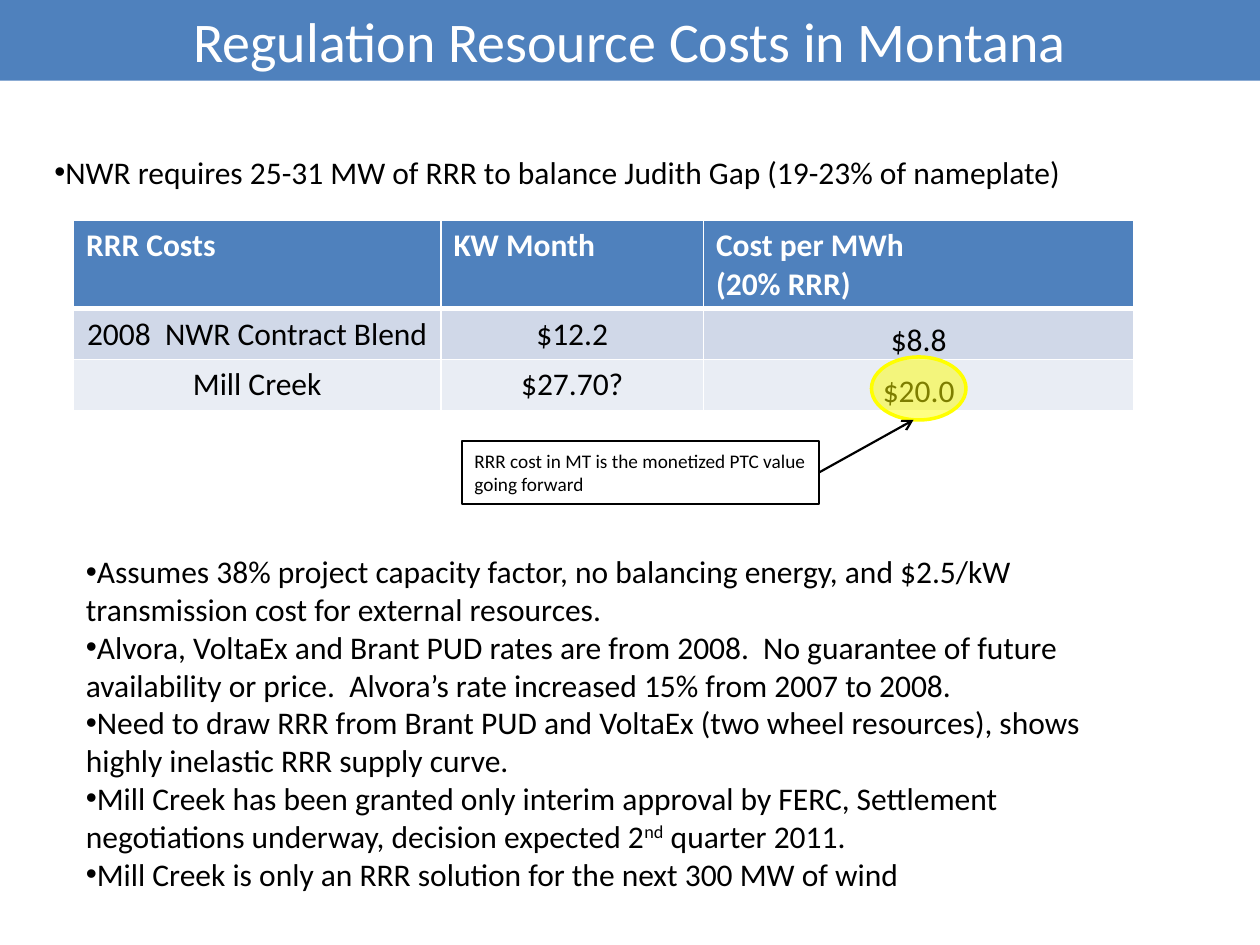
from lxml.etree import SubElement
from pptx import Presentation
from pptx.dml.color import RGBColor
from pptx.enum.shapes import MSO_CONNECTOR, MSO_SHAPE
from pptx.enum.text import MSO_ANCHOR, PP_ALIGN
from pptx.oxml.ns import qn
from pptx.util import Inches, Pt

COLORS = {
    "blue": "4F81BD",
    "band": "D0D8E8",
    "pale": "E9EDF4",
    "yellow": "FFFF00",
    "white": "FFFFFF",
    "black": "000000",
}
FONT = "Calibri"
UNITS_PER_INCH = 12
REQUIREMENT = ["NWR requires 25-31 MW of RRR to balance Judith Gap (19-23% of nameplate)"]
COSTS = [
    [["RRR Costs"], ["KW Month"], ["Cost per MWh", "(20% RRR)"]],
    [["2008  NWR Contract Blend"], ["$12.2"], ["$8.8"]],
    [["Mill Creek"], ["$27.70?"], ["$20.0"]],
]
NOTES = [
    "Assumes 38% project capacity factor, no balancing energy, and $2.5/kW "
    "transmission cost for external resources.",
    "Alvora, VoltaEx and Brant PUD rates are from 2008.  No guarantee of future "
    "availability or price.  Alvora’s rate increased 15% from 2007 to 2008.",
    "Need to draw RRR from Brant PUD and VoltaEx (two wheel resources), shows "
    "highly inelastic RRR supply curve.",
    "Mill Creek has been granted only interim approval by FERC, Settlement "
    "negotiations underway, decision expected 2^nd^ quarter 2011.",
    "Mill Creek is only an RRR solution for the next 300 MW of wind",
]


def grid(*units):
    """Turn grid columns and rows into lengths."""
    return [Inches(unit / UNITS_PER_INCH) for unit in units]


def color(name):
    """Look up a named colour."""
    return RGBColor.from_string(COLORS[name])


def write_text(frame, lines, size=18, ink="black", bold=False,
               align=PP_ALIGN.LEFT, bullet=False):
    """Fill a text frame with paragraphs, raising the text between carets."""
    frame.word_wrap = True
    for index, line in enumerate(lines):
        para = frame.add_paragraph() if index else frame.paragraphs[0]
        para.alignment = align
        if bullet:
            add_bullet(para)
        for position, piece in enumerate(line.split("^")):
            span = para.add_run()
            span.text = piece
            span.font.name = FONT
            span.font.size = Pt(size)
            span.font.bold = bold
            span.font.color.rgb = color(ink)
            if position % 2:
                span.font._element.set("baseline", "30000")


def add_bullet(para):
    """Put a bullet directly before a paragraph."""
    properties = para._p.get_or_add_pPr()
    properties.set("marL", "0")
    properties.set("indent", "0")
    SubElement(properties, qn("a:buFont"), typeface="Arial")
    SubElement(properties, qn("a:buChar"), char="•")


def add_bullets(page, place, lines):
    """Add a text box of bulleted paragraphs."""
    box = page.shapes.add_textbox(*grid(*place))
    write_text(box.text_frame, lines, bullet=True)


def add_box(page, kind, place, fill, line=None, width=0.75, opacity=None):
    """Add a filled shape with an optional outline and opacity."""
    box = page.shapes.add_shape(kind, *grid(*place))
    box.shadow.inherit = False
    box.fill.solid()
    box.fill.fore_color.rgb = color(fill)
    if opacity:
        tint = box._element.spPr.find(qn("a:solidFill"))[0]
        SubElement(tint, qn("a:alpha"), val=str(opacity * 1000))
    if line:
        box.line.color.rgb = color(line)
        box.line.width = Pt(width)
    else:
        box.line.fill.background()
    return box


def add_arrow(page, start, end):
    """Add a thin black arrow."""
    arrow = page.shapes.add_connector(MSO_CONNECTOR.STRAIGHT, *grid(*start, *end))
    arrow.line.color.rgb = color("black")
    arrow.line.width = Pt(1.25)
    SubElement(arrow.line._get_or_add_ln(), qn("a:tailEnd"), type="arrow")
    SubElement(arrow._element.spPr, qn("a:effectLst"))


def add_borders(cell, bottom):
    """Draw white cell borders with a chosen bottom width."""
    properties = cell._tc.get_or_add_tcPr()
    for side, width in (("L", 1), ("R", 1), ("T", 1), ("B", bottom)):
        edge = SubElement(properties, qn(f"a:ln{side}"), w=str(Pt(width)))
        paint = SubElement(edge, qn("a:solidFill"))
        SubElement(paint, qn("a:srgbClr"), val=COLORS["white"])


def add_cost_table(page, place, columns, rows):
    """Add the cost table with a header and two shaded rows."""
    table = page.shapes.add_table(len(rows), len(columns), *grid(*place)).table
    table.horz_banding = False
    for column, width in zip(table.columns, grid(*columns)):
        column.width = width
    for row, height in zip(table.rows, grid(*rows)):
        row.height = height
    for row, (texts, fill) in enumerate(zip(COSTS, ("blue", "band", "pale"))):
        header = row == 0
        for column, lines in enumerate(texts):
            cell = table.cell(row, column)
            add_borders(cell, 3 if header else 1)
            cell.fill.solid()
            cell.fill.fore_color.rgb = color(fill)
            if not header and column == len(columns) - 1:
                cell.vertical_anchor = MSO_ANCHOR.BOTTOM
                cell.margin_left = cell.margin_right = cell.margin_top = Inches(0.01)
                cell.margin_bottom = 0
            write_text(cell.text_frame, lines, bold=header,
                       ink="white" if header else "black",
                       align=PP_ALIGN.LEFT if header else PP_ALIGN.CENTER)


def main():
    """Build the slide and save it."""
    deck = Presentation()
    deck.slide_width, deck.slide_height = grid(120, 90)
    page = deck.slides.add_slide(deck.slide_layouts[6])

    title = add_box(page, MSO_SHAPE.RECTANGLE, (0, 0, 120, 7.68), "blue")
    write_text(title.text_frame, ["Regulation Resource Costs in Montana"],
               size=32, ink="white", align=PP_ALIGN.CENTER)
    add_bullets(page, (4, 14, 103, 4.8), REQUIREMENT)
    add_cost_table(page, (7, 21, 101, 18.1), (35, 25, 41), (8.4, 4.85, 4.85))
    add_bullets(page, (7, 52, 102, 34), NOTES)

    add_box(page, MSO_SHAPE.OVAL, (83, 34, 9, 6), "yellow", "yellow", 2, opacity=49)
    add_arrow(page, (78, 45), (87, 40))
    callout = add_box(page, MSO_SHAPE.RECTANGLE, (44, 42, 34, 6), "white", "black")
    write_text(callout.text_frame,
               ["RRR cost in MT is the monetized PTC value going forward"], size=11)
    deck.save("out.pptx")


if __name__ == "__main__":
    main()
